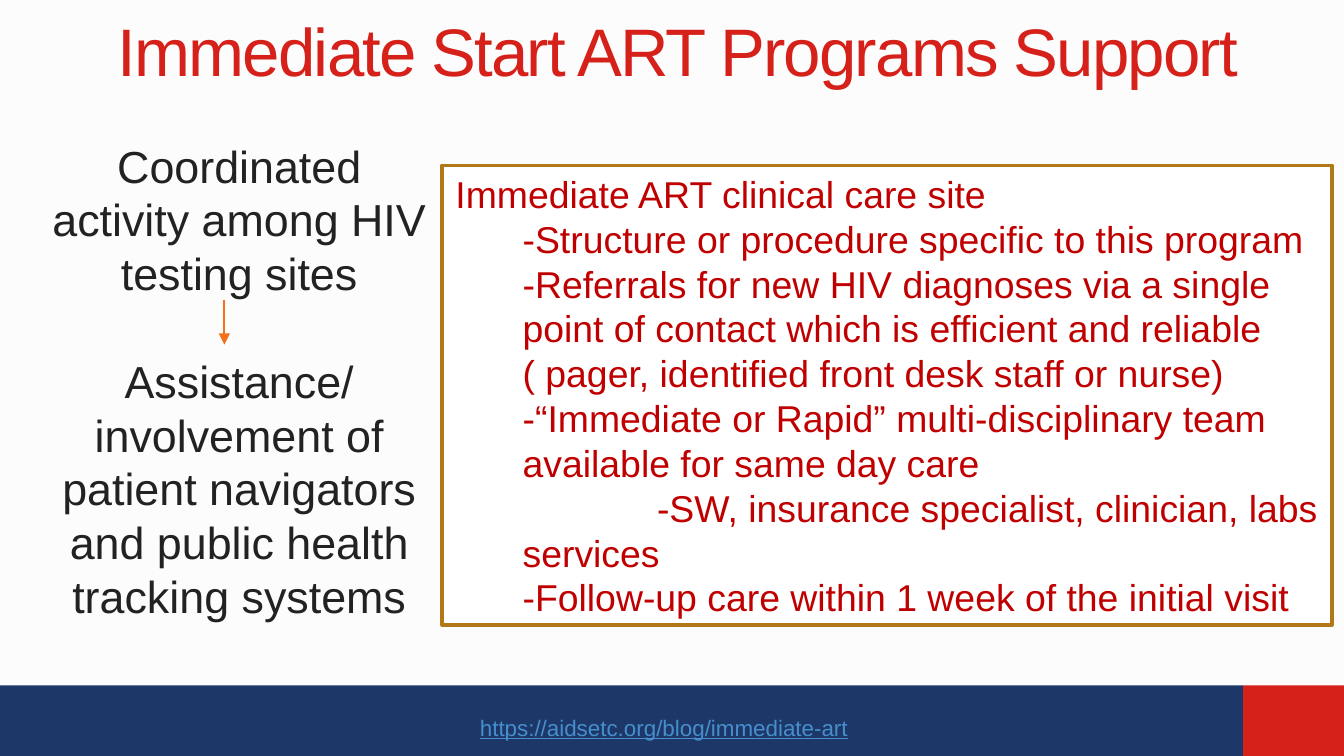
from lxml import etree
from pptx import Presentation
from pptx.dml.color import RGBColor
from pptx.enum import shapes, text
from pptx.oxml import ns
from pptx.util import Pt

COLORS = {
    "background": "FCFCFC", "navy": "1C3768", "red": "D6201A",
    "body": "222222", "care": "C00000", "panel": "FFFFFF",
    "border": "B27817", "link": "478FCC", "arrow": "F3711A",
}
WIDTH, HEIGHT = 720, 405
CENTER, LEFT = text.PP_ALIGN.CENTER, text.PP_ALIGN.LEFT
MIDDLE, TOP = text.MSO_ANCHOR.MIDDLE, text.MSO_ANCHOR.TOP

SUPPORT_STEPS = [
    "Coordinated activity among HIV testing sites",
    "Assistance/involvement of patient navigators and public health tracking systems",
]
# Each line: wording, left margin, first-line indent
CARE_LINES = [
    ("Immediate ART clinical care site", 0, 0),
    ("-Structure or procedure specific to this program", 36, 0),
    ("-Referrals for new HIV diagnoses via a single point of contact which is "
     "efficient and reliable ( pager, identified front desk staff or nurse)", 36, 0),
    ("-“Immediate or Rapid” multi-disciplinary team available for same day care", 36, 0),
    ("-SW, insurance specialist, clinician, labs services", 36, 72),
    ("-Follow-up care within 1 week of the initial visit", 36, 0),
]


def rgb(name):
    return RGBColor.from_string(COLORS[name])


def points(box):
    return [Pt(value) for value in box]


def apply(target, values):
    for name, value in values.items():
        setattr(target, name, value)


def set_frame(frame, anchor):
    apply(frame, {"word_wrap": True, "auto_size": text.MSO_AUTO_SIZE.NONE,
                  "vertical_anchor": anchor})


def write(paragraph, wording, size, color, align, margin=0, indent=0, **font):
    props = paragraph._p.get_or_add_pPr()
    props.set("marL", str(Pt(margin)))
    props.set("indent", str(Pt(indent)))
    paragraph.alignment = align
    run = paragraph.add_run()
    run.text = wording
    apply(run.font, {"name": "Arial", "size": Pt(size), **font})
    run.font.color.rgb = rgb(color)
    return run


def paragraph_at(frame, index):
    return frame.add_paragraph() if index else frame.paragraphs[0]


def add_block(slide, box, fill):
    block = slide.shapes.add_shape(shapes.MSO_SHAPE.RECTANGLE, *points(box))
    block.shadow.inherit = False
    block.fill.solid()
    block.fill.fore_color.rgb = rgb(fill)
    block.line.fill.background()
    return block


def add_title(slide, box):
    title = slide.shapes.title
    apply(title, dict(zip(("left", "top", "width", "height"), points(box))))
    set_frame(title.text_frame, MIDDLE)
    run = write(title.text_frame.paragraphs[0],
                "Immediate Start ART Programs Support", 36, "red", CENTER)
    run._r.get_or_add_rPr().set("spc", "-100")


def add_support_steps(slide, box):
    left, top, _, _ = box
    frame = slide.shapes.add_textbox(*points(box)).text_frame
    set_frame(frame, TOP)
    for index, step in enumerate(SUPPORT_STEPS):
        paragraph = paragraph_at(frame, index)
        write(paragraph, step, 24, "body", CENTER, margin=6.5)
        if index:
            paragraph.space_before = Pt(28.8)

    # Arrow from the first step to the second
    x, y = left + 108, top + 90
    arrow = slide.shapes.add_connector(
        shapes.MSO_CONNECTOR.STRAIGHT, *points((x, y, x, y + 24)))
    arrow.line.color.rgb = rgb("arrow")
    arrow.line.width = Pt(1)
    etree.SubElement(arrow.line._get_or_add_ln(), ns.qn("a:tailEnd"), type="triangle")
    etree.SubElement(arrow._element.spPr, ns.qn("a:effectLst"))


def add_care_site(slide, box):
    panel = add_block(slide, box, "panel")
    panel.line.color.rgb = rgb("border")
    panel.line.width = Pt(2)
    set_frame(panel.text_frame, MIDDLE)
    for index, (wording, margin, indent) in enumerate(CARE_LINES):
        write(paragraph_at(panel.text_frame, index), wording, 20, "care", LEFT,
              margin, indent)


def add_footer(slide, box):
    left, top, width, height = box
    accent = 54
    add_block(slide, (left, top, width - accent, height), "navy")
    add_block(slide, (left + width - accent, top, accent, height), "red")
    address = slide.shapes.add_textbox(*points((left + 250, top + 11.7, 248, 21.6)))
    set_frame(address.text_frame, TOP)
    write(address.text_frame.paragraphs[0], "https://aidsetc.org/blog/immediate-art",
          12, "link", LEFT, underline=True)


def main():
    deck = Presentation()
    apply(deck, {"slide_width": Pt(WIDTH), "slide_height": Pt(HEIGHT)})
    slide = deck.slides.add_slide(deck.slide_layouts[5])
    slide.background.fill.solid()
    slide.background.fill.fore_color.rgb = rgb("background")

    add_footer(slide, (0, 367.2, WIDTH, HEIGHT - 367.2))
    add_title(slide, (36, -7.5, 654.5, 67.7))
    add_support_steps(slide, (12.2, 70.6, 225.4, 300))
    add_care_site(slide, (236.9, 88.6, 476.6, 246.2))
    deck.save("out.pptx")


if __name__ == "__main__":
    main()
